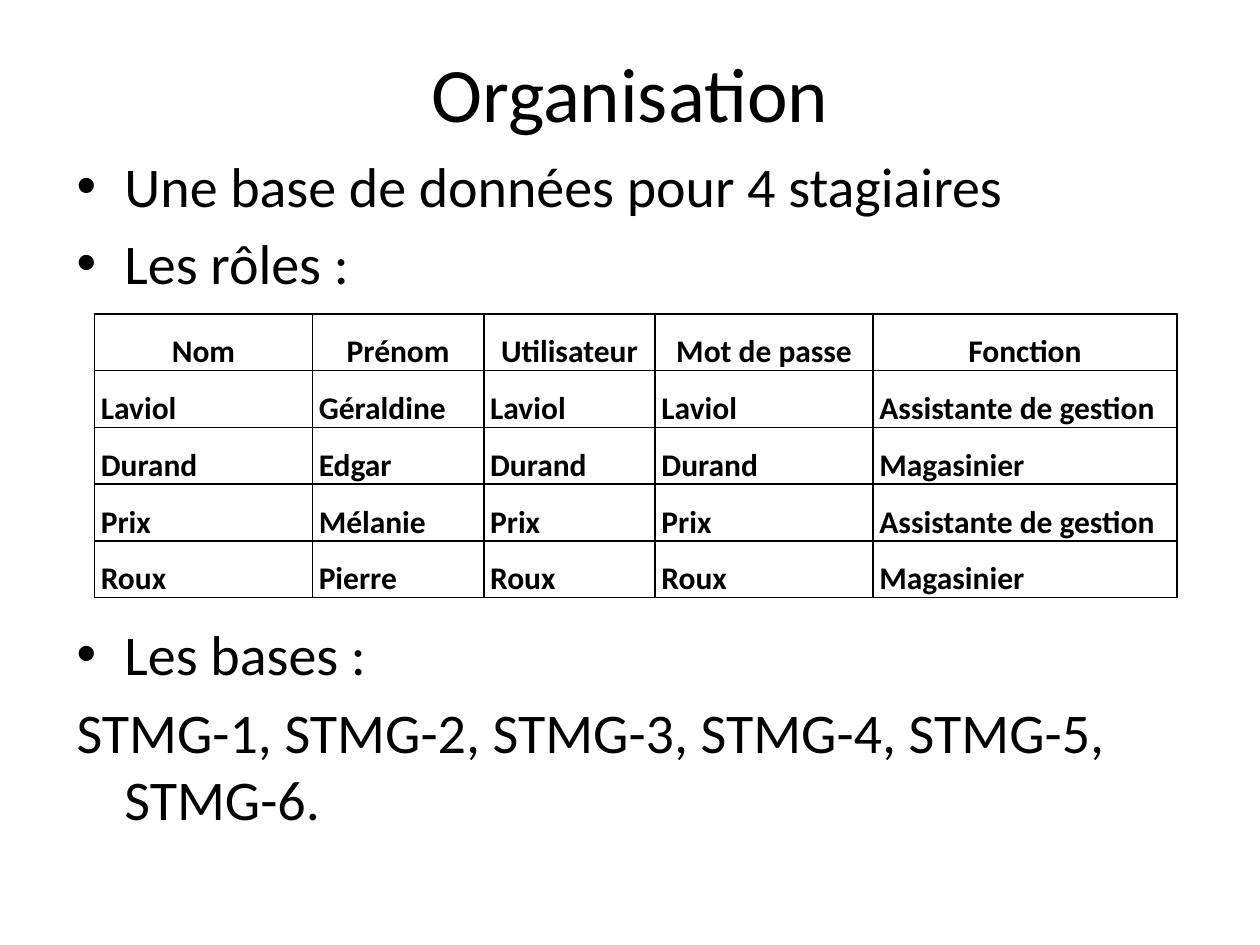
import pptx
import pptx.dml.color
import pptx.enum.text
import pptx.oxml
import pptx.oxml.ns
import pptx.util
from pptx.util import Inches

BLACK = pptx.dml.color.RGBColor(0, 0, 0)
ALIGN = pptx.enum.text.PP_ALIGN
ANCHOR = pptx.enum.text.MSO_ANCHOR

ROLES = [
    ["Nom", "Prénom", "Utilisateur", "Mot de passe", "Fonction"],
    ["Laviol", "Géraldine", "Laviol", "Laviol", "Assistante de gestion"],
    ["Durand", "Edgar", "Durand", "Durand", "Magasinier"],
    ["Prix", "Mélanie", "Prix", "Prix", "Assistante de gestion"],
    ["Roux", "Pierre", "Roux", "Roux", "Magasinier"],
]
ROLE_WIDTHS = [1.73, 1.36, 1.36, 1.73, 2.41]
ROW_HEIGHT = 0.43

# Text, bulleted or not, space before in points (the large one clears the table)
POINTS = [
    ("Une base de données pour 4 stagiaires", True, 6),
    ("Les rôles :", True, 6),
    ("Les bases :", True, 185),
    ("STMG-1, STMG-2, STMG-3, STMG-4, STMG-5, STMG-6.", False, 6),
]


class SlideWriter:
    font_name = "Calibri"
    title_size = 44
    body_size = 32
    table_size = 18
    hanging = Inches(0.38)

    def __init__(self, slide):
        self.slide = slide

    def add_run(self, paragraph, text, size, bold=False):
        run = paragraph.add_run()
        run.text = text
        run.font.name = self.font_name
        run.font.size = pptx.util.Pt(size)
        run.font.bold = bold
        run.font.color.rgb = BLACK

    def add_frame(self, left, top, width, height, anchor):
        box = self.slide.shapes.add_textbox(
            Inches(left), Inches(top), Inches(width), Inches(height))
        frame = box.text_frame
        frame.word_wrap = True
        frame.vertical_anchor = anchor
        return frame

    def add_title(self, text, *place):
        paragraph = self.add_frame(*place, ANCHOR.MIDDLE).paragraphs[0]
        paragraph.alignment = ALIGN.CENTER
        self.add_run(paragraph, text, self.title_size)

    def add_points(self, points, *place):
        frame = self.add_frame(*place, ANCHOR.TOP)
        for index, (text, bulleted, space) in enumerate(points):
            paragraph = frame.add_paragraph() if index else frame.paragraphs[0]
            paragraph.space_before = pptx.util.Pt(space)
            self.add_run(paragraph, text, self.body_size)
            self.hang(paragraph, bulleted)

    def hang(self, paragraph, bulleted):
        """Give the paragraph a hanging indent, with a bullet if asked."""
        properties = paragraph._p.get_or_add_pPr()
        properties.set("marL", str(self.hanging))
        properties.set("indent", str(-self.hanging))
        namespace = pptx.oxml.ns.nsdecls("a")
        if bulleted:
            properties.append(pptx.oxml.parse_xml(
                f'<a:buFont {namespace} typeface="Arial"/>'))
            properties.append(pptx.oxml.parse_xml(
                f'<a:buChar {namespace} char="•"/>'))
        else:
            properties.append(pptx.oxml.parse_xml(f"<a:buNone {namespace}/>"))

    def add_table(self, rows, widths, row_height, left, top):
        table = self.slide.shapes.add_table(
            len(rows), len(widths), Inches(left), Inches(top),
            Inches(sum(widths)), Inches(row_height * len(rows))).table
        for column, width in zip(table.columns, widths):
            column.width = Inches(width)
        for row_index, row in enumerate(rows):
            for column_index, text in enumerate(row):
                self.fill_cell(table.cell(row_index, column_index), text,
                               is_header=row_index == 0)

    def fill_cell(self, cell, text, is_header):
        cell.margin_left = cell.margin_right = Inches(0.05)
        cell.margin_top = cell.margin_bottom = 0
        cell.vertical_anchor = ANCHOR.MIDDLE if is_header else ANCHOR.BOTTOM
        paragraph = cell.text_frame.paragraphs[0]
        paragraph.alignment = ALIGN.CENTER if is_header else ALIGN.LEFT
        paragraph.line_spacing = 1.5
        self.add_run(paragraph, text, self.table_size, bold=True)
        self.border(cell)
        cell.fill.background()

    def border(self, cell):
        properties = cell._tc.get_or_add_tcPr()
        for side in ("lnL", "lnR", "lnT", "lnB"):
            properties.append(pptx.oxml.parse_xml(
                f'<a:{side} {pptx.oxml.ns.nsdecls("a")} w="{pptx.util.Pt(1)}">'
                f'<a:solidFill><a:srgbClr val="{BLACK}"/></a:solidFill>'
                f"</a:{side}>"))


def main():
    presentation = pptx.Presentation()
    presentation.slide_width = Inches(10)
    presentation.slide_height = Inches(7.5)
    writer = SlideWriter(
        presentation.slides.add_slide(presentation.slide_layouts[6]))
    writer.add_title("Organisation", 0.5, 0.3, 9, 0.85)
    writer.add_points(POINTS, 0.51, 1.15, 9, 5.51)
    writer.add_table(ROLES, ROLE_WIDTHS, ROW_HEIGHT, 0.75, 2.49)
    presentation.save("out.pptx")


if __name__ == "__main__":
    main()
